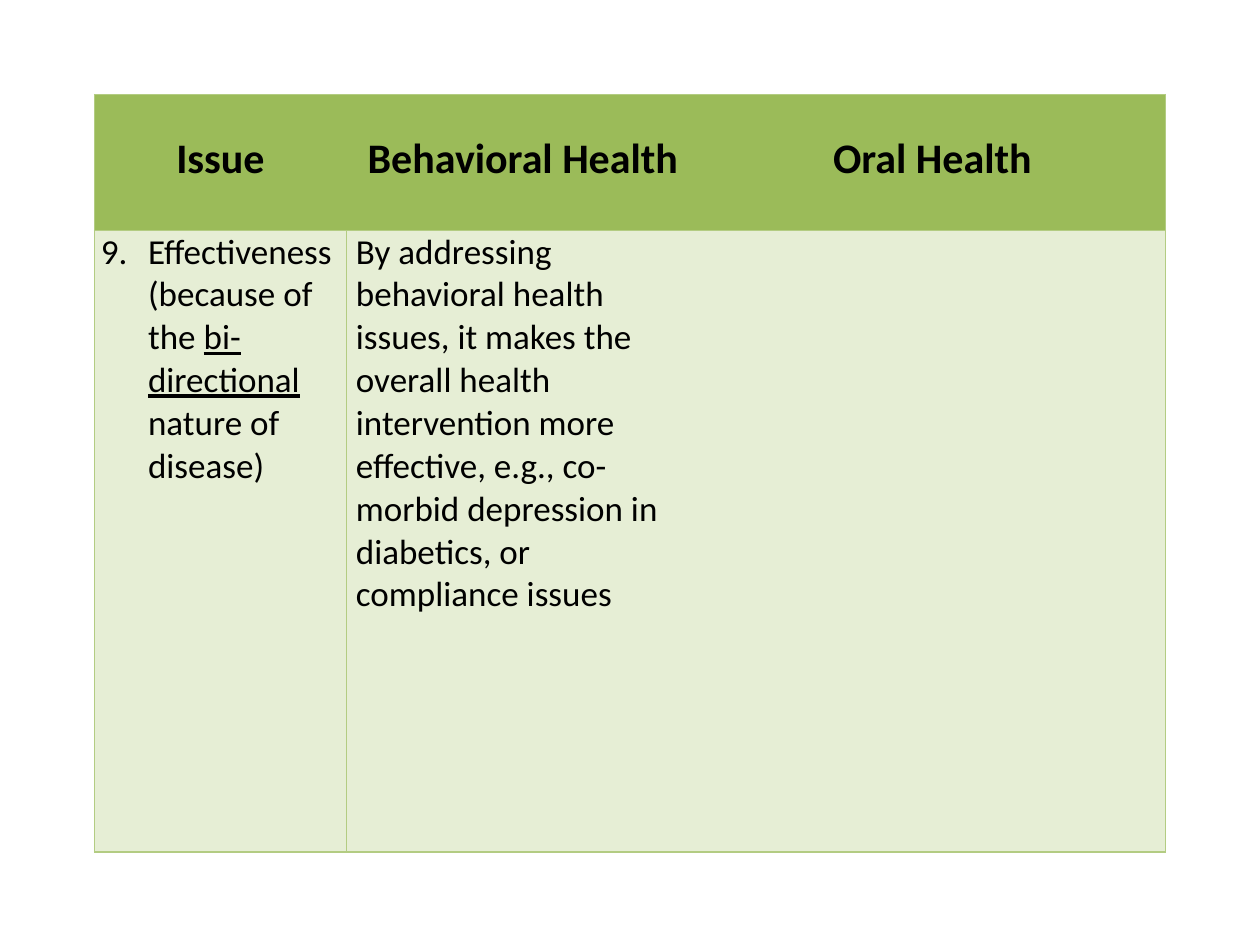
import pptx
import pptx.dml.color
import pptx.enum.text
import pptx.oxml
import pptx.oxml.ns
import pptx.util
from lxml import etree

Pt = pptx.util.Pt
RGBColor = pptx.dml.color.RGBColor
PP_ALIGN = pptx.enum.text.PP_ALIGN

BLACK = RGBColor(0x00, 0x00, 0x00)
HEADER_GREEN = RGBColor(0x9B, 0xBB, 0x59)
PALE_GREEN = RGBColor(0xE6, 0xEE, 0xD5)
LINE_GREEN = RGBColor(0xB3, 0xCC, 0x82)


def add_run(paragraph, text, size, bold=False, underline=False):
    run = paragraph.add_run()
    run.text = text
    run.font.name = "Calibri"
    run.font.size = Pt(size)
    run.font.bold = bold
    run.font.underline = underline
    run.font.color.rgb = BLACK


def set_borders(cell, sides):
    """Draw the given sides (letters of LRTB) and clear the others."""
    properties = cell._tc.get_or_add_tcPr()
    for position, side in enumerate("LRTB"):
        line = etree.Element(pptx.oxml.ns.qn(f"a:ln{side}"), w=str(Pt(1)))
        if side in sides:
            fill = etree.SubElement(line, pptx.oxml.ns.qn("a:solidFill"))
            etree.SubElement(fill, pptx.oxml.ns.qn("a:srgbClr"), val=str(LINE_GREEN))
        else:
            etree.SubElement(line, pptx.oxml.ns.qn("a:noFill"))
        properties.insert(position, line)


presentation = pptx.Presentation()
presentation.slide_width, presentation.slide_height = Pt(720), Pt(540)
slide = presentation.slides.add_slide(presentation.slide_layouts[6])

# Comparison table
column_widths = [144, 201.6, 266.4]
row_heights = [77.8, 355]
comparison = slide.shapes.add_table(
    2, 3, Pt(54), Pt(54), Pt(sum(column_widths)), Pt(sum(row_heights))
).table
for column, width in zip(comparison.columns, column_widths):
    column.width = Pt(width)
for row, height in zip(comparison.rows, row_heights):
    row.height = Pt(height)

# Fills, borders and margins
borders = [["LTB", "TB", "RTB"], ["LRTB", "LTB", "RTB"]]
for row_index, row_fill in enumerate([HEADER_GREEN, PALE_GREEN]):
    for column_index, sides in enumerate(borders[row_index]):
        cell = comparison.cell(row_index, column_index)
        cell.fill.solid()
        cell.fill.fore_color.rgb = row_fill
        cell.margin_left = cell.margin_right = Pt(3.6)
        cell.margin_top = cell.margin_bottom = Pt(0)
        set_borders(cell, sides)

# Header row
for column_index, heading in enumerate(["Issue", "Behavioral Health", "Oral Health"]):
    cell = comparison.cell(0, column_index)
    cell.margin_top = Pt(22.5)
    paragraph = cell.text_frame.paragraphs[0]
    paragraph.alignment = PP_ALIGN.CENTER
    add_run(paragraph, heading, 24, bold=True)

# Issue, with a hanging number
issue = comparison.cell(1, 0).text_frame.paragraphs[0]
indent = issue._p.get_or_add_pPr()
indent.set("marL", str(Pt(27)))
indent.set("indent", str(Pt(-27)))
add_run(issue, "9.\tEffectiveness (because of the ", 20)
add_run(issue, "bi-directional", 20, underline=True)
add_run(issue, " nature of disease)", 20)

# Behavioral health answer
behavioral = comparison.cell(1, 1)
behavioral.margin_left = behavioral.margin_right = Pt(5.4)
add_run(
    behavioral.text_frame.paragraphs[0],
    "By addressing behavioral health issues, it makes the overall health "
    "intervention more effective, e.g., co-morbid depression in diabetics, "
    "or compliance issues",
    20,
)

presentation.save("out.pptx")
